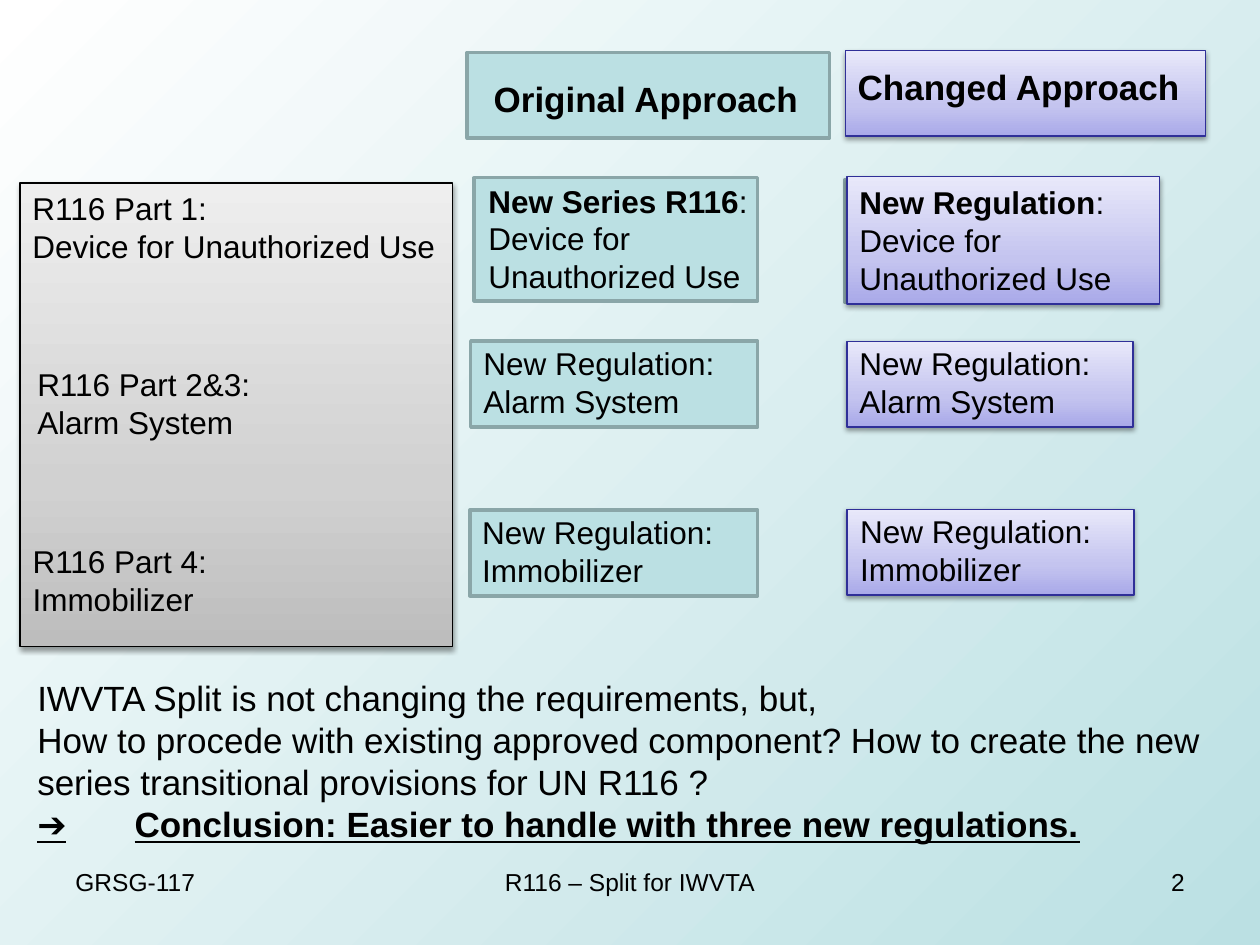
from copy import deepcopy
from lxml import etree
from pptx import Presentation
from pptx.dml.color import RGBColor
from pptx.enum import shapes, text
from pptx.oxml import ns
from pptx.util import Pt

BLACK = RGBColor(0, 0, 0)
WHITE = RGBColor(255, 255, 255)
TEAL = RGBColor(0xBB, 0xE0, 0xE3)
TEAL_EDGE = RGBColor(0x8A, 0xA6, 0xA8)
VIOLET_EDGE = RGBColor(0x2F, 0x2F, 0x98)
GREYS = [RGBColor(0xBD, 0xBD, 0xBD), RGBColor(0xD1, 0xD1, 0xD1), RGBColor(0xEE, 0xEE, 0xEE)]
VIOLETS = [RGBColor(0xA9, 0xA9, 0xE9), RGBColor(0xC4, 0xC4, 0xEF), RGBColor(0xE8, 0xE8, 0xFA)]

deck = Presentation()
deck.slide_width, deck.slide_height = Pt(720), Pt(540)
slide = deck.slides.add_slide(deck.slide_layouts[6])
backdrop = slide.background.fill
backdrop.gradient()
backdrop.gradient_angle = 315
for stop, colour in zip(backdrop.gradient_stops, [WHITE, TEAL]):
    stop.color.rgb = colour


def add_panel(box, edge, shades=None):
    panel = slide.shapes.add_shape(shapes.MSO_SHAPE.RECTANGLE, *map(Pt, box))
    panel.shadow.inherit = False
    panel.line.color.rgb = edge
    panel.line.width = Pt(0.75 if shades else 2)
    if not shades:
        panel.fill.solid()
        panel.fill.fore_color.rgb = TEAL
        return panel
    panel.fill.gradient()
    panel.fill.gradient_angle = 90
    properties = panel.element.spPr
    stops = properties.find(".//" + ns.qn("a:gsLst"))
    stops.insert(1, deepcopy(stops[0]))
    for stop, position, shade in zip(panel.fill.gradient_stops, [0, 0.35, 1], shades):
        stop.position = position
        stop.color.rgb = shade
    shadow = etree.SubElement(properties.find(ns.qn("a:effectLst")), ns.qn("a:outerShdw"),
                              blurRad=str(Pt(3.1)), dist=str(Pt(1.6)), dir="5400000", rotWithShape="0")
    tint = etree.SubElement(shadow, ns.qn("a:srgbClr"), val="000000")
    etree.SubElement(tint, ns.qn("a:alpha"), val="38000")
    return panel


def write(holder, lines, size=18, lead="", wrap=False, align=text.PP_ALIGN.LEFT):
    frame = holder.text_frame
    frame.word_wrap = wrap
    frame.vertical_anchor = text.MSO_ANCHOR.TOP
    for index, line in enumerate(lines):
        paragraph = frame.add_paragraph() if index else frame.paragraphs[0]
        paragraph.alignment = align
        head = lead if lead and line.startswith(lead) else ""
        for words, bold in [(head, True), (line[len(head):], False)]:
            if words:
                run = paragraph.add_run()
                run.text = words
                style = {"name": "Arial", "size": Pt(size), "bold": bold}
                for key, value in style.items():
                    setattr(run.font, key, value)
                run.font.color.rgb = BLACK
    return frame


for box in [(267, 30, 207, 49), (271, 101.5, 162, 70.5), (269, 195, 164, 49),
            (268.5, 291.5, 164.5, 49), (483, 102.5, 162, 70.5)]:
    add_panel(box, TEAL_EDGE)
add_panel((11.5, 104.5, 247, 265), BLACK, GREYS)
for box in [(484, 195, 163.5, 49), (484, 291, 164, 49), (483, 28.8, 206, 49)]:
    add_panel(box, VIOLET_EDGE, VIOLETS)

device = ["Device for Unauthorized Use"]
alarm = ["New Regulation:", "Alarm System"]
immobilizer = ["New Regulation:", "Immobilizer"]
new_device = add_panel((484, 101, 178.5, 72.7), VIOLET_EDGE, VIOLETS)
write(new_device, ["New Regulation:"] + device, lead="New Regulation", wrap=True)

for box, lines, size, lead in [
    ((11.5, 104.3, 247, 51), ["R116 Part 1:"] + device, 18, ""),
    ((14.2, 205.3, 142.5, 51), ["R116 Part 2&3:", "Alarm System"], 18, ""),
    ((11.5, 306, 120, 51), ["R116 Part 4:", "Immobilizer"], 18, ""),
    ((275, 40.6, 190, 31.5), ["Original Approach"], 20, "Original Approach"),
    ((483, 34, 200, 31.5), ["Changed Approach"], 20, "Changed Approach"),
    ((269.2, 193, 152.5, 51), alarm, 18, ""),
    ((268.5, 289.5, 152.5, 51), immobilizer, 18, ""),
    ((484, 193, 152.5, 51), alarm, 18, ""),
    ((484.5, 289, 152.5, 51), immobilizer, 18, ""),
]:
    write(slide.shapes.add_textbox(*map(Pt, box)), lines, size, lead)

series = slide.shapes.add_textbox(Pt(272), Pt(100.2), Pt(178.5), Pt(72.7))
write(series, ["New Series R116:"] + device, lead="New Series R116", wrap=True)

conclusion = "➔\tConclusion: Easier to handle with three new regulations."
summary = write(slide.shapes.add_textbox(Pt(14.2), Pt(383.2), Pt(685.5), Pt(104.5)), [
    "IWVTA Split is not changing the requirements, but,",
    "How to procede with existing approved component? How to create the new series "
    "transitional provisions for UN R116 ?",
    conclusion,
], 20, conclusion, True)
closing = summary.paragraphs[-1]
tabs = etree.SubElement(closing._p.get_or_add_pPr(), ns.qn("a:tabLst"))
etree.SubElement(tabs, ns.qn("a:tab"), pos=str(Pt(55.6)), algn="l")
for run in closing.runs:
    run.font.underline = True

for left, width, words, align in [
    (36, 168, "GRSG-117", text.PP_ALIGN.LEFT),
    (246, 228, "R116 – Split for IWVTA", text.PP_ALIGN.CENTER),
    (516, 168, "2", text.PP_ALIGN.RIGHT),
]:
    write(slide.shapes.add_textbox(Pt(left), Pt(492), Pt(width), Pt(37.5)), [words], 14, wrap=True, align=align)

deck.save("out.pptx")
